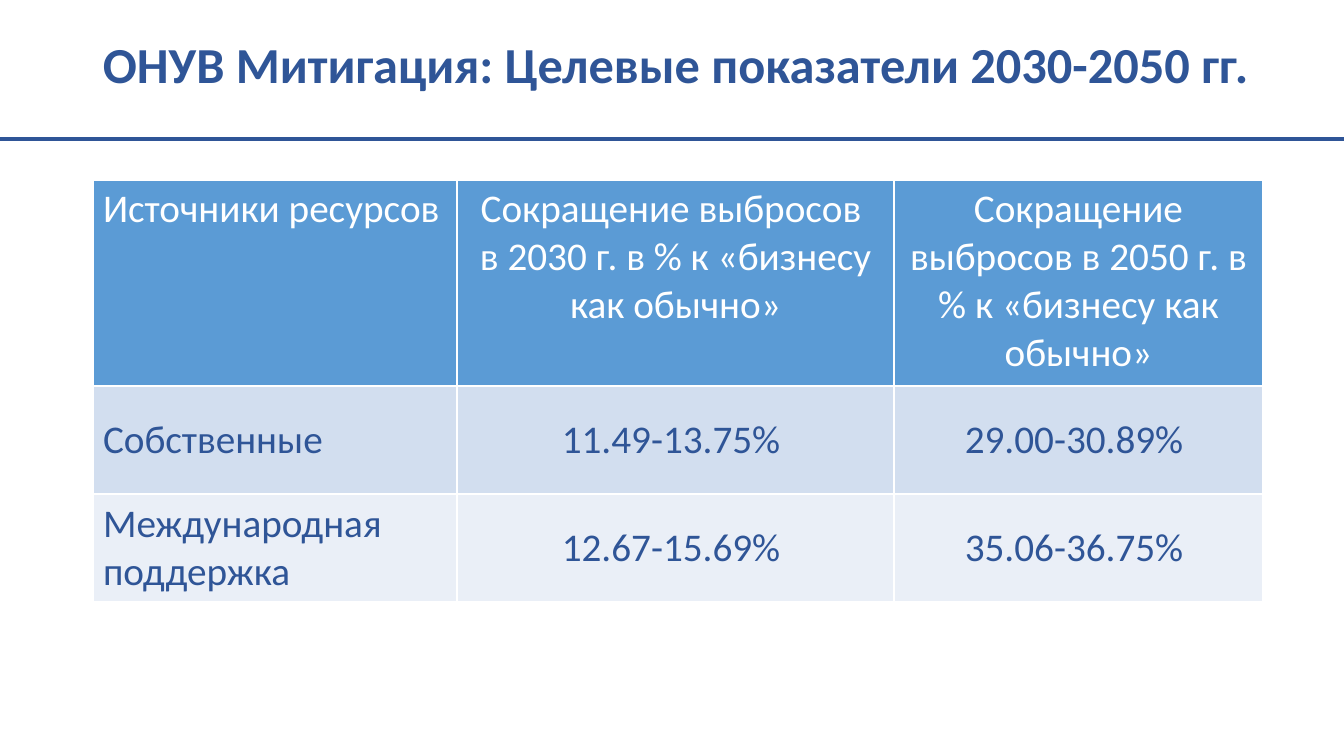
from dataclasses import dataclass

import pptx
import pptx.dml.color
import pptx.enum.shapes
import pptx.enum.text
import pptx.oxml
import pptx.oxml.ns
import pptx.util

EMU_PER_PX = 914400 / 100.8
SLIDE_WIDTH, SLIDE_HEIGHT = 1344, 756
FONT = "Calibri"
COLORS = {
    "navy": "2F5597",
    "header": "5B9BD5",
    "band_dark": "D2DEEF",
    "band_light": "EAEFF7",
    "white": "FFFFFF",
}
COLUMN_WIDTHS = (364, 437, 369)
MIDDLE = pptx.enum.text.MSO_ANCHOR.MIDDLE
TOP = pptx.enum.text.MSO_ANCHOR.TOP


@dataclass(frozen=True)
class TargetRow:
    """One table row; each cell is a tuple of paragraphs."""
    height: int
    fill: str
    ink: str
    anchor: pptx.enum.text.MSO_ANCHOR
    cells: tuple[tuple[str, ...], ...]


TARGET_ROWS = (
    TargetRow(206, "header", "white", TOP, (
        ("Источники ресурсов",),
        ("Сокращение выбросов ", "в 2030 г. в % к «бизнесу как обычно»"),
        ("Сокращение выбросов в 2050 г. в % к «бизнесу как обычно»",),
    )),
    TargetRow(108, "band_dark", "navy", MIDDLE, (
        ("Собственные",), ("11.49-13.75% ",), ("29.00-30.89% ",),
    )),
    TargetRow(108, "band_light", "navy", MIDDLE, (
        ("Международная поддержка",), ("12.67-15.69% ",), ("35.06-36.75% ",),
    )),
)


def px(length: int) -> pptx.util.Emu:
    return pptx.util.Emu(round(length * EMU_PER_PX))


def rgb(name: str) -> pptx.dml.color.RGBColor:
    return pptx.dml.color.RGBColor.from_string(COLORS[name])


def add_run(paragraph, text: str, size: int, color: str, bold: bool = False) -> None:
    run = paragraph.add_run()
    run.text = text
    run.font.name = FONT
    run.font.size = pptx.util.Pt(size)
    run.font.bold = bold
    run.font.color.rgb = rgb(color)


def add_borders(cell, color: str, points: int) -> None:
    """Border elements must stand before the fill in the cell properties."""
    properties = cell._tc.get_or_add_tcPr()
    for position, side in enumerate(("lnL", "lnR", "lnT", "lnB")):
        border = pptx.oxml.parse_xml(
            f'<a:{side} {pptx.oxml.ns.nsdecls("a")} w="{pptx.util.Pt(points)}">'
            f'<a:solidFill><a:srgbClr val="{COLORS[color]}"/></a:solidFill></a:{side}>'
        )
        properties.insert(position, border)


def add_title(slide) -> None:
    title = slide.shapes.add_textbox(px(93), px(14), px(1210), px(107))
    title.text_frame.word_wrap = True
    title.text_frame.vertical_anchor = MIDDLE
    heading = title.text_frame.paragraphs[0]
    heading.line_spacing = 0.9
    add_run(heading, "ОНУВ Митигация: Целевые показатели 2030-2050 гг.", 36, "navy", True)


def add_divider(slide) -> None:
    divider = slide.shapes.add_connector(
        pptx.enum.shapes.MSO_CONNECTOR.STRAIGHT, 0, px(139), px(SLIDE_WIDTH), px(139))
    divider.line.color.rgb = rgb("navy")
    divider.line.width = pptx.util.Pt(3)
    divider._element.spPr.append(
        pptx.oxml.parse_xml(f'<a:effectLst {pptx.oxml.ns.nsdecls("a")}/>'))


def fill_cell(cell, row: TargetRow, paragraphs: tuple[str, ...], centred: bool) -> None:
    cell.fill.solid()
    cell.fill.fore_color.rgb = rgb(row.fill)
    cell.vertical_anchor = row.anchor
    add_borders(cell, "white", 1)
    frame = cell.text_frame
    for index, text in enumerate(paragraphs):
        paragraph = frame.add_paragraph() if index else frame.paragraphs[0]
        if centred:
            paragraph.alignment = pptx.enum.text.PP_ALIGN.CENTER
        add_run(paragraph, text, 28, row.ink)


def add_targets(slide) -> None:
    targets = slide.shapes.add_table(
        len(TARGET_ROWS), len(COLUMN_WIDTHS), px(93), px(180),
        px(sum(COLUMN_WIDTHS)), px(sum(row.height for row in TARGET_ROWS))).table
    for column, width in zip(targets.columns, COLUMN_WIDTHS):
        column.width = px(width)
    for row_index, row in enumerate(TARGET_ROWS):
        targets.rows[row_index].height = px(row.height)
        for column_index, paragraphs in enumerate(row.cells):
            fill_cell(targets.cell(row_index, column_index), row, paragraphs,
                      centred=column_index > 0)


def main() -> None:
    presentation = pptx.Presentation()
    presentation.slide_width = px(SLIDE_WIDTH)
    presentation.slide_height = px(SLIDE_HEIGHT)
    slide = presentation.slides.add_slide(presentation.slide_layouts[6])

    # Heading with the rule below it
    add_title(slide)
    add_divider(slide)

    # Emission reduction targets
    add_targets(slide)

    presentation.save("out.pptx")


if __name__ == "__main__":
    main()
